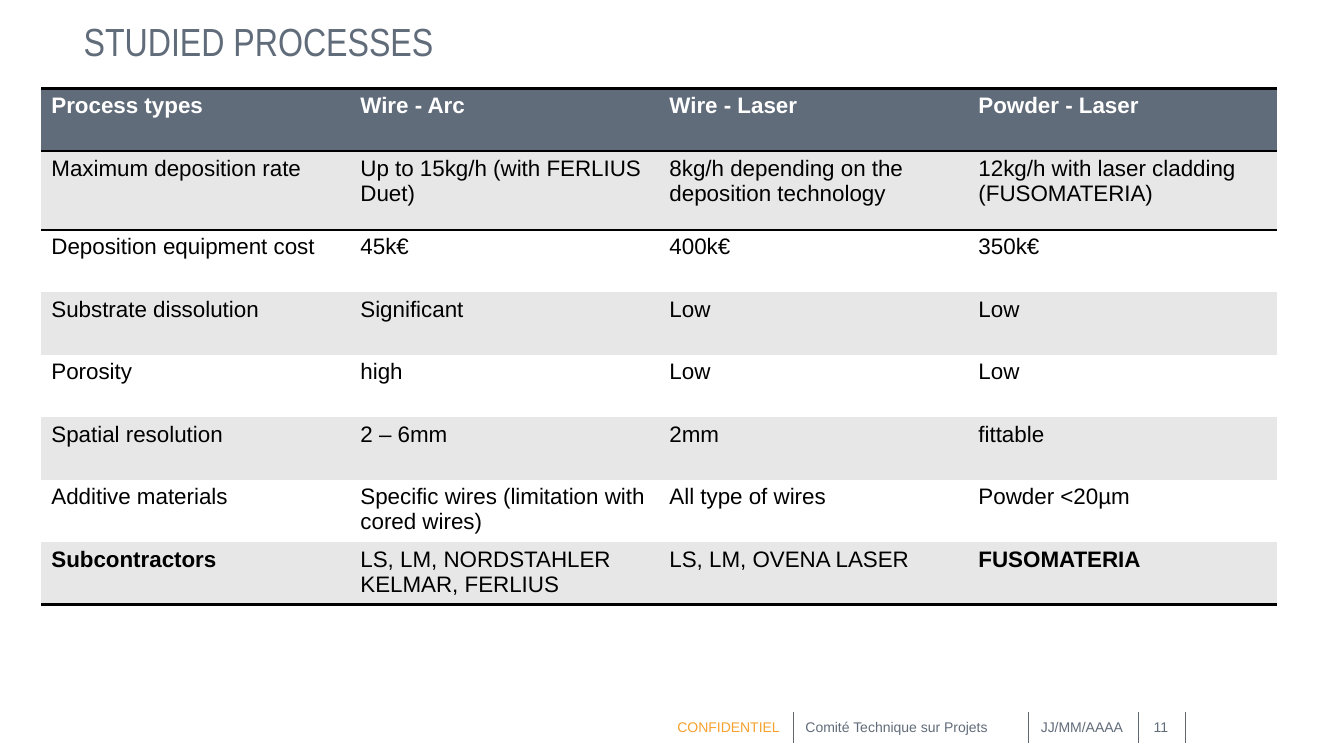
"""Build the slide comparing the studied deposition processes."""
from dataclasses import dataclass

from lxml.etree import SubElement
from pptx import Presentation
from pptx.dml.color import RGBColor
from pptx.enum.shapes import MSO_CONNECTOR
from pptx.enum.text import MSO_ANCHOR, PP_ALIGN
from pptx.oxml import parse_xml
from pptx.oxml.ns import nsdecls, qn
from pptx.slide import Slide
from pptx.table import _Cell
from pptx.text.text import TextFrame
from pptx.util import Inches, Pt


@dataclass(frozen=True)
class Theme:
    slate: RGBColor = RGBColor(0x61, 0x6C, 0x7A)
    divider: RGBColor = RGBColor(0x60, 0x68, 0x71)
    orange: RGBColor = RGBColor(0xF6, 0xA2, 0x2D)
    band: RGBColor = RGBColor(0xE7, 0xE7, 0xE7)
    white: RGBColor = RGBColor(0xFF, 0xFF, 0xFF)
    black: RGBColor = RGBColor(0, 0, 0)
    title_font: str = "Arial Narrow"
    body_font: str = "Arial"
    title_size: int = 28
    table_size: int = 16
    footer_size: int = 10


@dataclass(frozen=True)
class FooterItem:
    text: str
    left: float
    top: float
    width: float
    height: float
    color: RGBColor
    alignment: PP_ALIGN = PP_ALIGN.LEFT
    anchor: MSO_ANCHOR = MSO_ANCHOR.MIDDLE


THEME = Theme()
NO_STYLE_NO_GRID = "{2D5ABB26-0587-4C30-8999-92F81FD0307C}"
COLUMN_WIDTH = 3.065
ROW_HEIGHT = 0.62
TALL_ROW_HEIGHT = 0.78
PROCESSES = [
    ["Process types", "Wire - Arc", "Wire - Laser", "Powder - Laser"],
    ["Maximum deposition rate", "Up to 15kg/h (with FERLIUS Duet)",
     "8kg/h depending on the deposition technology", "12kg/h with laser cladding (FUSOMATERIA)"],
    ["Deposition equipment cost", "45k€", "400k€", "350k€"],
    ["Substrate dissolution", "Significant", "Low", "Low"],
    ["Porosity", "high", "Low", "Low"],
    ["Spatial resolution", "2 – 6mm", "2mm", "fittable"],
    ["Additive materials", "Specific wires (limitation with cored wires)",
     "All type of wires", "Powder <20µm"],
    ["Subcontractors", "LS, LM, NORDSTAHLER KELMAR, FERLIUS", "LS, LM, OVENA LASER", "FUSOMATERIA"],
]
BOLD_TEXTS = {*PROCESSES[0], "Subcontractors", "FUSOMATERIA"}
FOOTER_ITEMS = [
    FooterItem("CONFIDENTIEL", 6.62, 7.13, 1.32, 0.17, THEME.orange, anchor=MSO_ANCHOR.BOTTOM),
    FooterItem("Comité Technique sur Projets", 7.89, 7.01, 2.29, 0.4, THEME.slate),
    FooterItem("JJ/MM/AAAA", 10.17, 7.01, 1.12, 0.4, THEME.slate, PP_ALIGN.CENTER),
    FooterItem("11", 11.25, 7.01, 0.53, 0.4, THEME.slate, PP_ALIGN.CENTER),
]
DIVIDER_POSITIONS = [7.87, 10.2, 11.29, 11.76]


def write_text(frame: TextFrame, text: str, font_name: str, size: int,
               color: RGBColor, bold: bool = False) -> None:
    frame.text = text
    font = frame.paragraphs[0].font
    font.name = font_name
    font.size = Pt(size)
    font.bold = bold
    font.color.rgb = color


def add_title(slide: Slide, text: str) -> None:
    title = slide.shapes.title
    title.left, title.top = Inches(0.83), Inches(0.14)
    title.width, title.height = Inches(12.26), Inches(0.59)
    frame = title.text_frame
    write_text(frame, text, THEME.title_font, THEME.title_size, THEME.slate)
    frame.margin_left = frame.margin_right = frame.margin_top = frame.margin_bottom = 0
    frame.vertical_anchor = MSO_ANCHOR.MIDDLE
    frame.paragraphs[0].alignment = PP_ALIGN.LEFT
    frame.paragraphs[0].line_spacing = 0.9


def add_border(cell: _Cell, tag: str, position: int) -> None:
    line = parse_xml(
        f'<a:{tag} {nsdecls("a")} w="{Pt(2)}"><a:solidFill>'
        f'<a:srgbClr val="{THEME.black}"/></a:solidFill></a:{tag}>')
    cell._tc.get_or_add_tcPr().insert(position, line)


def add_process_table(slide: Slide) -> None:
    row_count, column_count = len(PROCESSES), len(PROCESSES[0])
    height = ROW_HEIGHT * (row_count - 1) + TALL_ROW_HEIGHT
    table = slide.shapes.add_table(
        row_count, column_count, Inches(0.41), Inches(0.88),
        Inches(COLUMN_WIDTH * column_count), Inches(height)).table
    table._tbl.tblPr.find(qn("a:tableStyleId")).text = NO_STYLE_NO_GRID
    for column in table.columns:
        column.width = Inches(COLUMN_WIDTH)
    for row_index, texts in enumerate(PROCESSES):
        is_header = row_index == 0
        table.rows[row_index].height = Inches(TALL_ROW_HEIGHT if row_index == 1 else ROW_HEIGHT)
        band = THEME.band if row_index % 2 else THEME.white
        for column_index, text in enumerate(texts):
            cell = table.cell(row_index, column_index)
            write_text(cell.text_frame, text, THEME.body_font, THEME.table_size,
                       THEME.white if is_header else THEME.black, text in BOLD_TEXTS)
            cell.fill.solid()
            cell.fill.fore_color.rgb = THEME.slate if is_header else band
            if is_header or row_index == row_count - 1:
                add_border(cell, "lnB", 0)
            if is_header or row_index == 1:
                add_border(cell, "lnT", 0)


def add_footer_item(slide: Slide, item: FooterItem) -> None:
    box = slide.shapes.add_textbox(Inches(item.left), Inches(item.top),
                                   Inches(item.width), Inches(item.height))
    frame = box.text_frame
    frame.word_wrap = True
    frame.margin_top = frame.margin_bottom = 0
    frame.vertical_anchor = item.anchor
    write_text(frame, item.text, THEME.body_font, THEME.footer_size, item.color)
    frame.paragraphs[0].alignment = item.alignment


def add_divider(slide: Slide, left: float) -> None:
    divider = slide.shapes.add_connector(
        MSO_CONNECTOR.STRAIGHT, Inches(left), Inches(7.37), Inches(left), Inches(7.06))
    divider.line.color.rgb = THEME.divider
    divider.line.width = Pt(0.5)
    SubElement(divider._element.spPr, qn("a:effectLst"))


def main() -> None:
    presentation = Presentation()
    presentation.slide_width, presentation.slide_height = Inches(13.33), Inches(7.5)
    slide = presentation.slides.add_slide(presentation.slide_layouts.get_by_name("Title Only"))
    add_title(slide, "STUDIED PROCESSES")
    add_process_table(slide)
    for item in FOOTER_ITEMS:
        add_footer_item(slide, item)
    for left in DIVIDER_POSITIONS:
        add_divider(slide, left)
    presentation.save("out.pptx")


if __name__ == "__main__":
    main()
